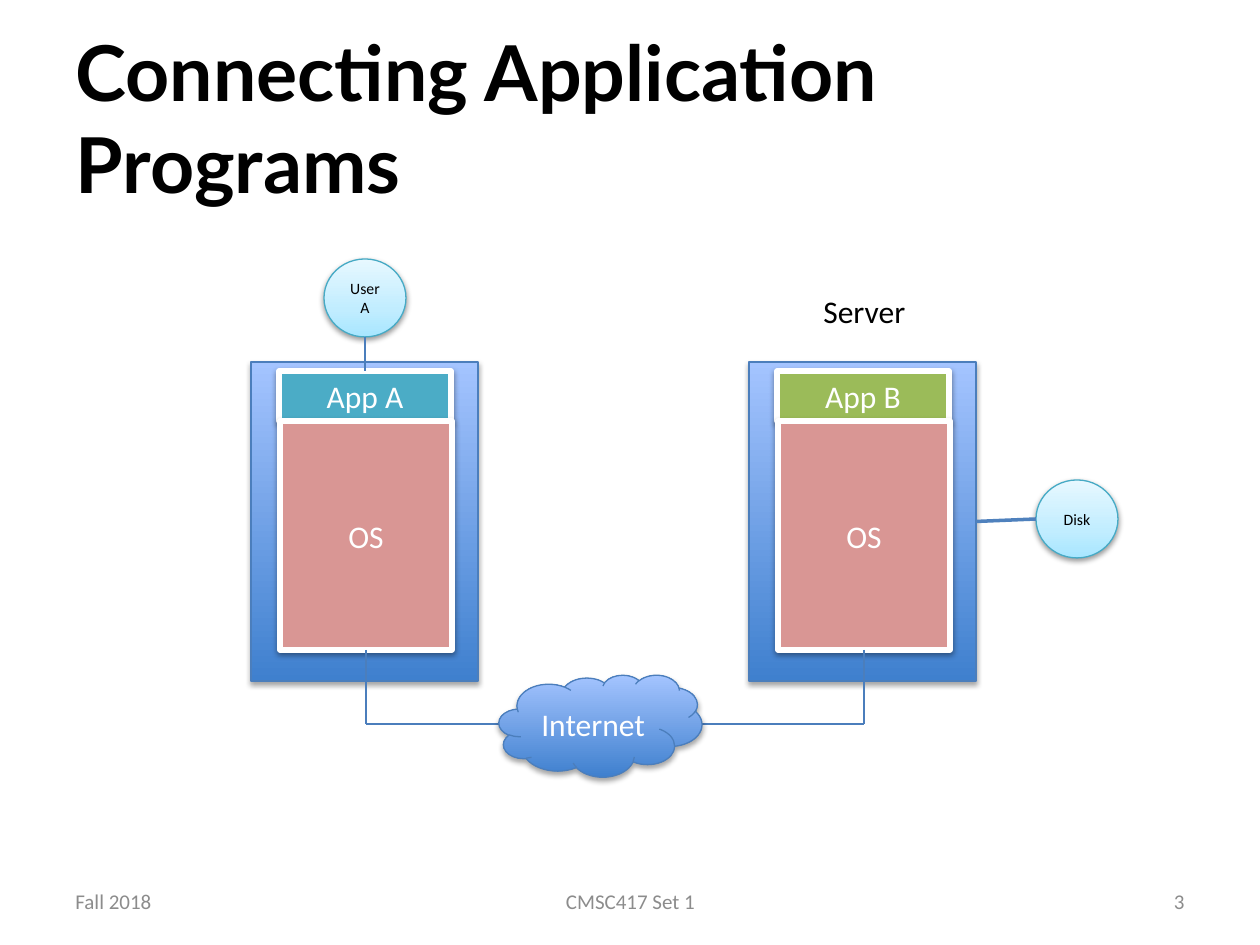
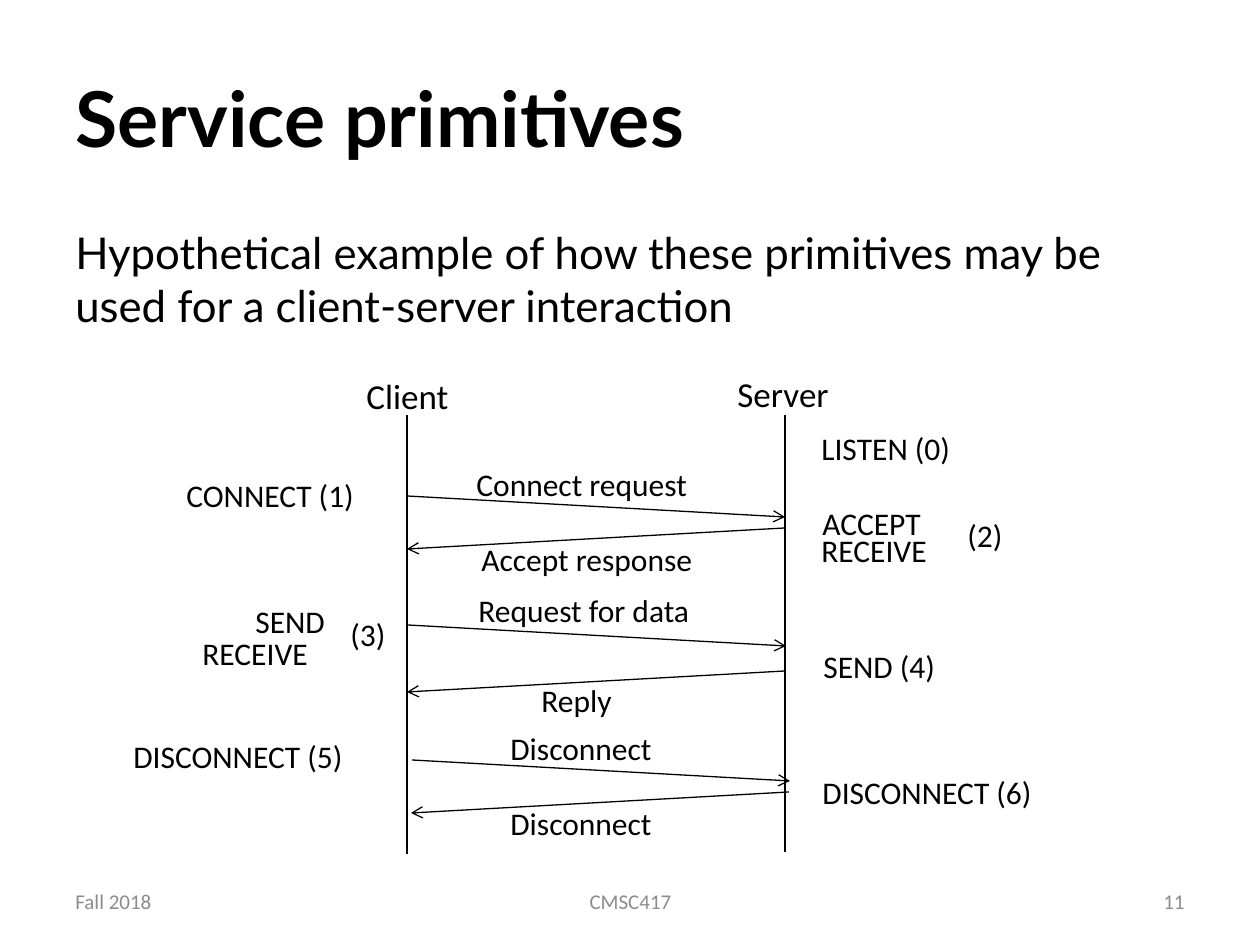
from lxml import etree
from pptx import Presentation
from pptx import util as u
from pptx.dml.color import RGBColor
from pptx.enum import shapes, text
from pptx.oxml import ns

PX = 914400 / 126
BLUE = [(0, "3F80CE"), (100, "A4C4FF")]
ICE = [(0, "A7E6FF"), (35, "C1EDFF"), (100, "E7F8FF")]
EDGE, BLACK, WHITE, GREY = "4B7EBC", "000000", "FFFFFF", "8C8C8C"
LEFT, CENTER, RIGHT = text.PP_ALIGN.LEFT, text.PP_ALIGN.CENTER, text.PP_ALIGN.RIGHT
RECT, OVAL, CLOUD = (shapes.MSO_SHAPE.RECTANGLE, shapes.MSO_SHAPE.OVAL,
                     shapes.MSO_SHAPE.CLOUD)


def px(*values):
    return [u.Emu(round(v * PX)) for v in values]


def rgb(value):
    return RGBColor.from_string(value)


def sub(parent, tag, **attrs):
    return etree.SubElement(parent, ns.qn(tag), {k: str(v) for k, v in attrs.items()})


class Deck:
    """Holds the shared style and the current slide."""

    body_font, title_font = "Calibri", "Lato"

    def __init__(self):
        self.prs = Presentation()
        self.prs.slide_width, self.prs.slide_height = px(1260, 945)
        self.s = None

    def slide(self, title, course, number):
        self.s = self.prs.slides.add_slide(self.prs.slide_layouts[5])
        sp = self.s.shapes.title
        sp.left, sp.top, sp.width, sp.height = px(63, 38, 1134, 157)
        self.add_text(sp.text_frame, title, 44, BLACK, LEFT, self.title_font, True)
        for words, x, w, align in (("Fall 2018", 63, 294, LEFT),
                                   (course, 431, 399, CENTER),
                                   (number, 903, 294, RIGHT)):
            self.label(words, x, 876, w, 12, GREY, align, middle=True)

    def add_text(self, tf, words, size, color, align=LEFT, font=None, bold=False,
                 middle=True):
        tf.word_wrap = True
        tf.auto_size = text.MSO_AUTO_SIZE.NONE
        tf.vertical_anchor = (text.MSO_ANCHOR.MIDDLE if middle
                              else text.MSO_ANCHOR.TOP)
        p = tf.paragraphs[0]
        p.alignment = align
        r = p.add_run()
        r.text = words
        r.font.size, r.font.bold = u.Pt(size), bold
        r.font.name = font or self.body_font
        r.font.color.rgb = rgb(color)
        return p

    def label(self, words, x, y, w, size=18, color=BLACK, align=LEFT, h=50,
              font=None, middle=False):
        sp = self.s.shapes.add_textbox(*px(x, y, w, h))
        return self.add_text(sp.text_frame, words, size, color, align, font,
                             middle=middle)

    def shadow(self, sp, alpha, distance):
        sp.shadow.inherit = False
        effects = sp._element.spPr.find(ns.qn("a:effectLst"))
        outer = sub(effects, "a:outerShdw", blurRad=40000, dist=distance,
                    dir=5400000, rotWithShape=0)
        sub(sub(outer, "a:srgbClr", val=BLACK), "a:alpha", val=alpha * 1000)

    def shape(self, kind, x, y, w, h, fill, line=EDGE, weight=0.75, words=None,
              size=18, color=WHITE):
        sp = self.s.shapes.add_shape(kind, *px(x, y, w, h))
        if isinstance(fill, list):
            sp.fill.gradient()
            sp.fill.gradient_angle = 90
            stops = next(sp._element.spPr.iter(ns.qn("a:gsLst")))
            for stop in list(stops):
                stops.remove(stop)
            for position, shade in fill:
                sub(sub(stops, "a:gs", pos=position * 1000), "a:srgbClr", val=shade)
        else:
            sp.fill.solid()
            sp.fill.fore_color.rgb = rgb(fill)
        sp.line.color.rgb = rgb(line)
        sp.line.width = u.Pt(weight)
        self.shadow(sp, *((35, 23000) if fill is BLUE else (38, 20000)))
        if words:
            self.add_text(sp.text_frame, words, size, color, CENTER)
        return sp

    def line(self, x1, y1, x2, y2, color=BLACK, weight=0.75, arrow=False,
             begin=None, end=None):
        c = self.s.shapes.add_connector(shapes.MSO_CONNECTOR.STRAIGHT,
                                        *px(x1, y1, x2, y2))
        c.line.color.rgb = rgb(color)
        c.line.width = u.Pt(weight)
        if arrow:
            sub(c._element.spPr.find(ns.qn("a:ln")), "a:tailEnd", type="arrow")
        sub(c._element.spPr, "a:effectLst")
        if begin:
            c.begin_connect(*begin)
        if end:
            c.end_connect(*end)
        return c


def connecting_programs(d):
    d.slide("Connecting Application Programs", "CMSC417 Set 1", "3")

    # Two hosts, each with an application on top of an operating system
    hosts, apps, systems = [], [], []
    for i, (app, fill) in enumerate((("App A", "4BACC6"), ("App B", "9BBB59"))):
        dx = 498 * i
        hosts.append(d.shape(RECT, 251 + dx, 362, 227, 319, BLUE))
        apps.append(d.shape(RECT, 279 + dx, 371, 172, 50, fill, WHITE, 3, app))
        systems.append(d.shape(RECT, 280 + dx, 421, 172, 229, "D99694", WHITE, 3, "OS"))
    d.label("Server", 811, 286, 112)

    # User and disk with their links
    for words, x, y in (("User A", 324, 259), ("Disk", 1036, 480)):
        d.shape(OVAL, x, y, 82, 78, ICE, "46AAC5", words=words, size=9, color=BLACK)
    d.line(365, 337, 365, 371, EDGE, end=(apps[0], 0))
    d.line(1036, 519, 976, 521, "4F81BD", 2, end=(hosts[1], 3))

    # Cable from both hosts to the network
    for system, x in zip(systems, (366, 864)):
        d.line(x, 650, x, 724, EDGE, begin=(system, 2))
    d.line(366, 724, 864, 724, EDGE)
    d.shape(CLOUD, 499, 675, 203, 102, BLUE, words="Internet")


def service_primitives(d):
    d.slide("Service primitives", "CMSC417", "11")
    p = d.label("Hypothetical example of how these primitives may be used for a "
                "client-server interaction", 63, 220, 1134, 25, h=126,
                font=d.title_font)
    p.space_before = u.Pt(5)

    # Lifelines
    client, server = 407, 785
    d.line(client, 415, client, 854)
    d.line(server, 415, server, 852)
    d.label("Client", 354, 368, 116, 20, h=55)
    d.label("Server", 725, 366, 130, 20, h=55)

    # Messages alternate in direction, each falling by the same amount
    messages = (("Connect request", 464, 459, 258, 496, 0),
                ("Accept response", 469, 534, 262, 528, 0),
                ("Request for data", 466, 585, 261, 625, 1),
                ("Reply", 529, 675, 107, 671, 0),
                ("Disconnect", 498, 723, 183, 760, 5),
                ("Disconnect", 498, 798, 183, 792, 4))
    for i, (words, x, y, w, start, dx) in enumerate(messages):
        source, target = (server, client) if i % 2 else (client, server)
        d.line(source + dx, start, target + dx, start + 21, arrow=True)
        d.label(words, x, y, w)

    # Primitives called on each side
    for words, x, y, w in (("LISTEN (0)", 809, 423, 184), ("ACCEPT", 810, 498, 163),
                           ("RECEIVE", 809, 525, 165), ("(2)", 955, 510, 66),
                           ("SEND (4)", 811, 641, 161),
                           ("DISCONNECT (6)", 810, 767, 282),
                           ("CONNECT (1)", 174, 470, 229), ("SEND", 243, 596, 113),
                           ("RECEIVE", 190, 628, 165), ("(3)", 338, 609, 66),
                           ("DISCONNECT (5)", 121, 731, 282)):
        d.label(words, x, y, w)


def main():
    d = Deck()
    connecting_programs(d)
    service_primitives(d)
    d.prs.save("out.pptx")


if __name__ == "__main__":
    main()
